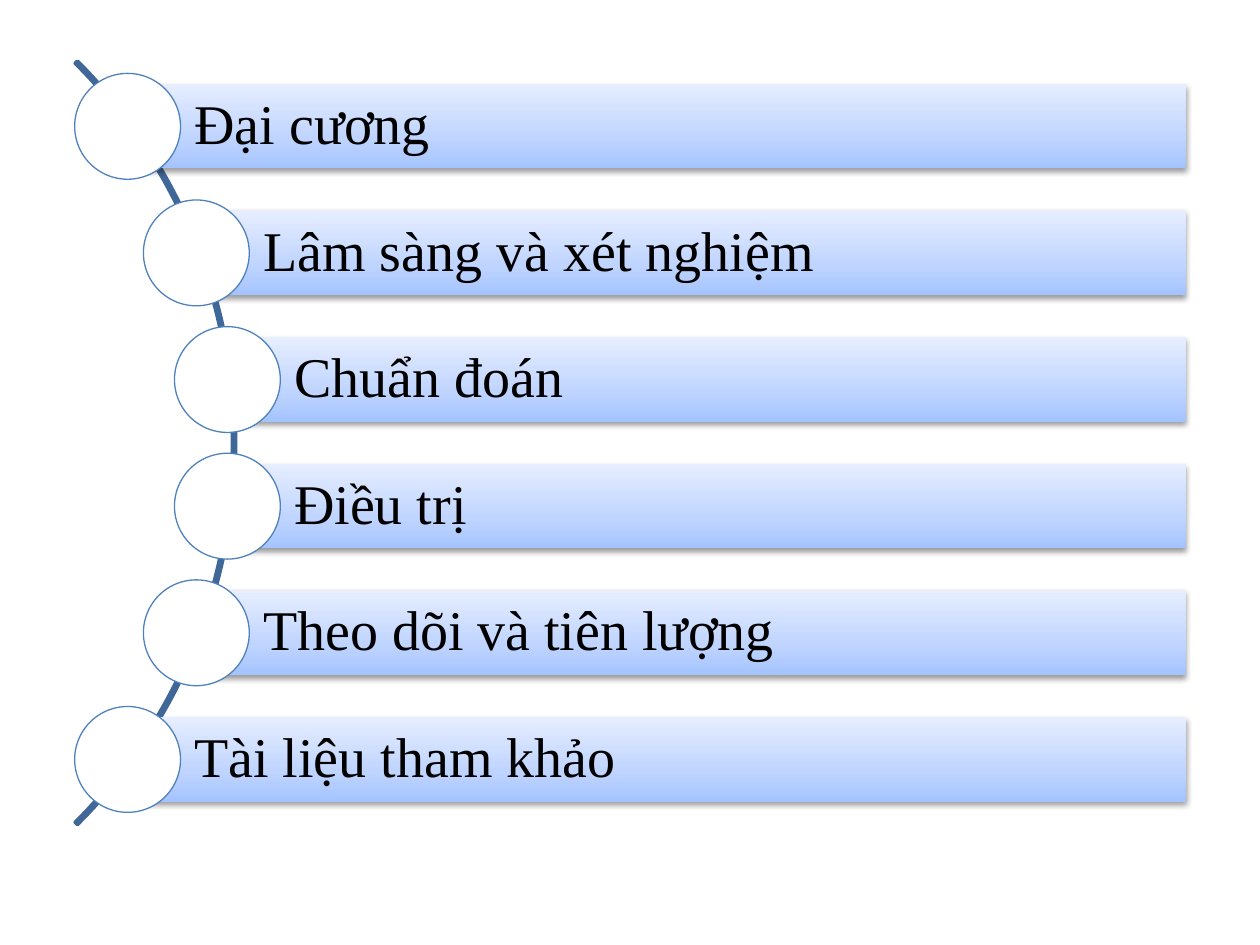
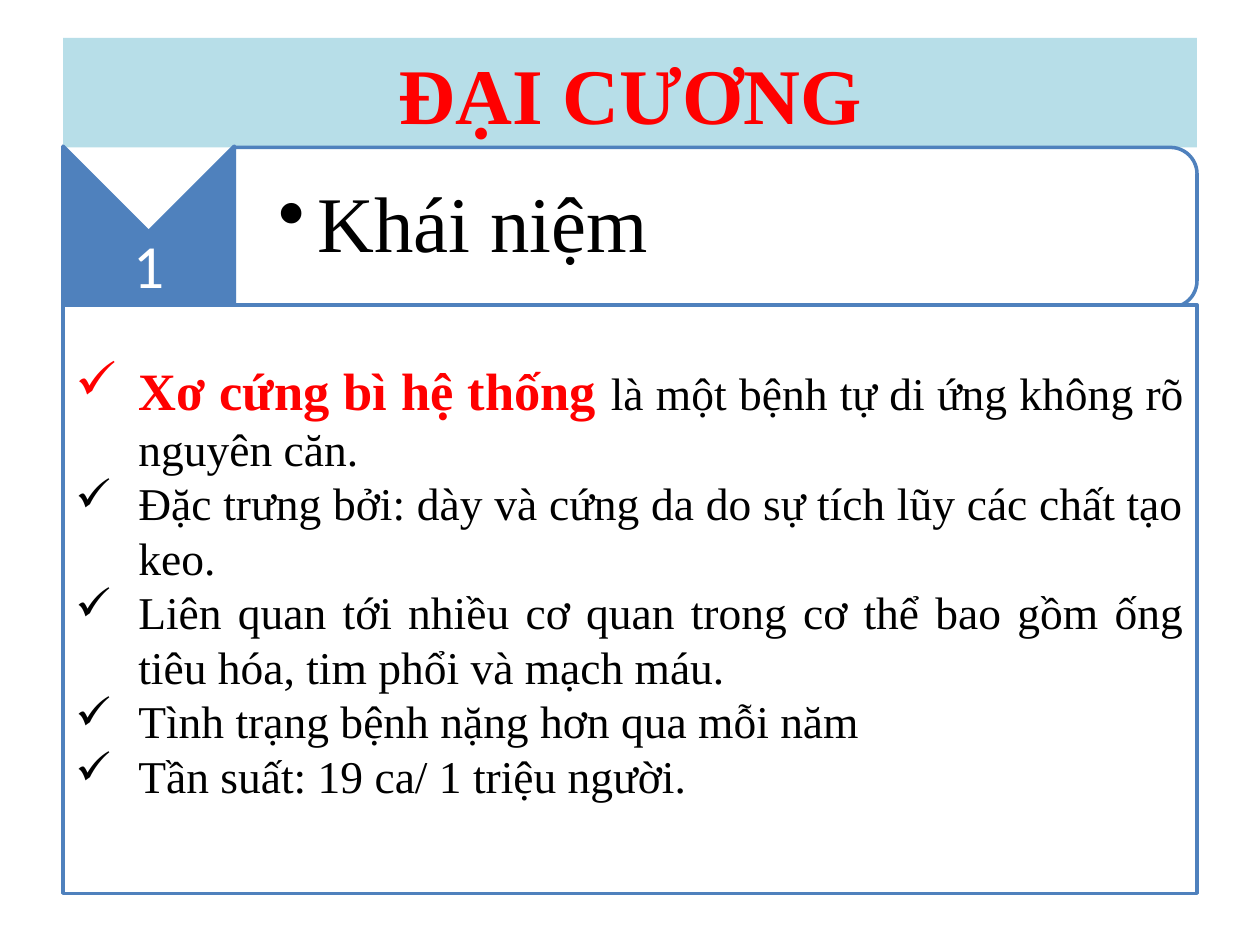
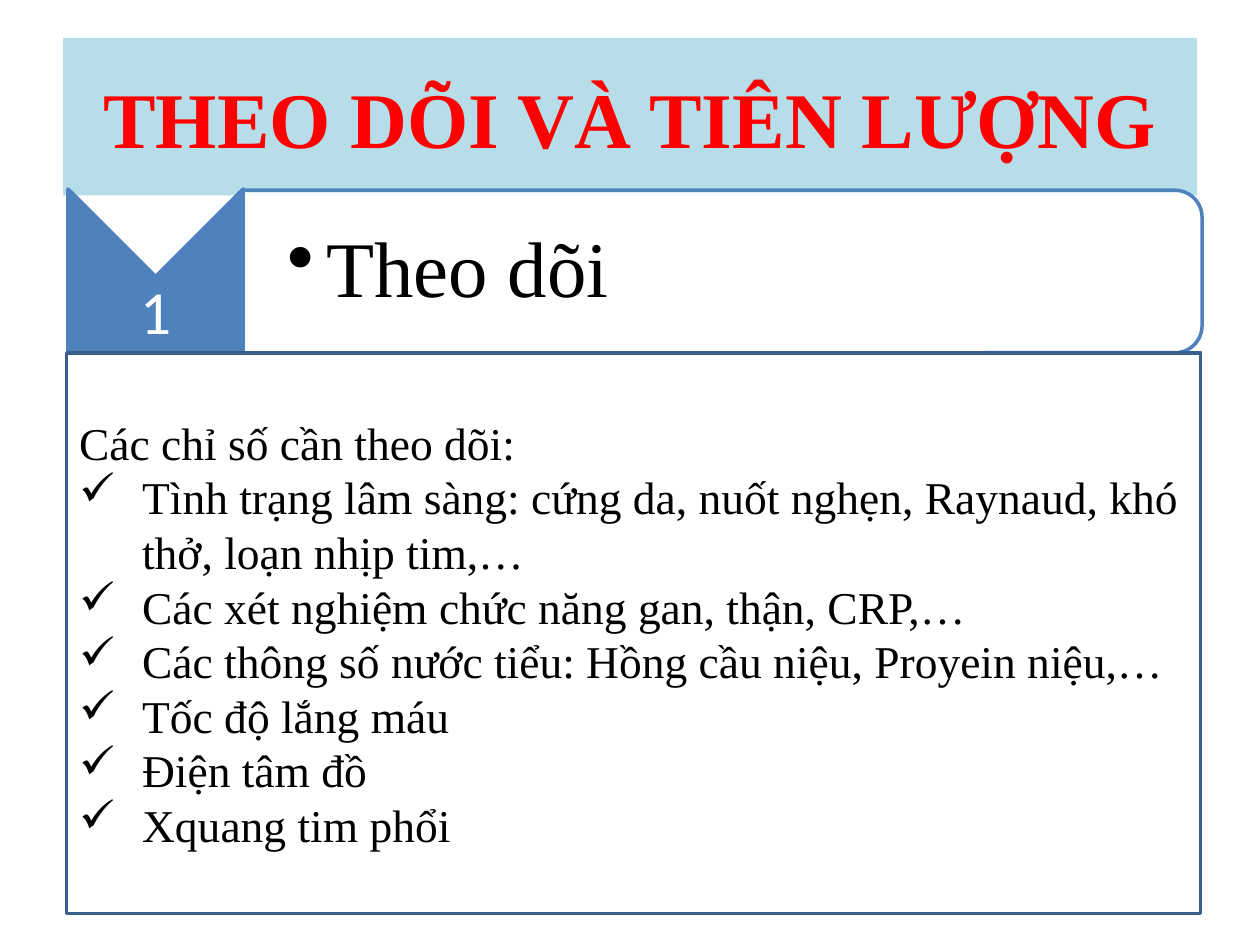
from dataclasses import dataclass
from math import sqrt

from lxml import etree
from pptx import Presentation
from pptx.dml.color import RGBColor
from pptx.enum.shapes import MSO_SHAPE
from pptx.enum.text import MSO_ANCHOR, MSO_AUTO_SIZE, PP_ALIGN
from pptx.oxml.ns import qn
from pptx.util import Inches, Pt

RECTANGLE = MSO_SHAPE.RECTANGLE
OVAL = MSO_SHAPE.OVAL
ARC = MSO_SHAPE.BLOCK_ARC
CHEVRON = MSO_SHAPE.CHEVRON
ROUND_TOP = MSO_SHAPE.ROUND_2_SAME_RECTANGLE
MIDDLE = MSO_ANCHOR.MIDDLE
NO_AUTOFIT = MSO_AUTO_SIZE.NONE
LEFT, CENTER, JUSTIFY = PP_ALIGN.LEFT, PP_ALIGN.CENTER, PP_ALIGN.JUSTIFY

SERIF, SANS = "Times New Roman", "Calibri"
COLORS = {
    "white": "FFFFFF", "black": "000000", "red": "FF0000",
    "band": "B7DEE8", "blue": "4F81BD", "deep": "3A5F8C", "arc": "3F6797",
}
BAR_GRADIENT = [(0, "A4C4FF"), (35, "BFD4FF"), (100, "E6EEFF")]

# Text formats
TITLE = {"name": SERIF, "size": 45, "bold": True, "color": "red"}
BAR = {"name": SERIF, "size": 32, "color": "black"}
NUMBER = {"name": SANS, "size": 35, "color": "white"}
CAPTION = {"name": SERIF, "size": 45, "color": "black"}
BODY = {"name": SERIF, "size": 26, "color": "black"}
TERM = {"name": SERIF, "size": 30, "bold": True, "color": "red"}


@dataclass
class Box:
    left: float
    top: float
    width: float
    height: float

    def lengths(self) -> list:
        return [Inches(n) for n in (self.left, self.top, self.width, self.height)]


@dataclass
class Line:
    spans: list
    bullet: str = ""
    indent: float = 0.5


@dataclass
class Topic:
    title: str
    title_height: float
    caption: str
    chevron: Box
    tile: Box
    panel: Box
    panel_line: str
    lines: list
    align: int
    bottom_inset: float = 0.05


# Helpers
def rgb(name: str) -> RGBColor:
    return RGBColor.from_string(COLORS[name])


def add_element(parent, tag: str, **attributes):
    element = etree.SubElement(parent, qn(tag))
    for key, value in attributes.items():
        element.set(key, str(value))
    return element


def add_figure(page, kind: int, box: Box, fill: str = "", line: str = "",
               weight: float = 2, turned: bool = False):
    """Draw a preset shape; a turned one fills its box after a quarter turn."""
    if turned:
        shift = (box.width - box.height) / 2
        box = Box(box.left + shift, box.top - shift, box.height, box.width)
    shape = page.shapes.add_shape(kind, *box.lengths())
    shape.rotation = 90 if turned else 0
    shape.shadow.inherit = False
    if fill:
        shape.fill.solid()
        shape.fill.fore_color.rgb = rgb(fill)
    else:
        shape.fill.background()
    if line:
        shape.line.color.rgb = rgb(line)
        shape.line.width = Pt(weight)
    else:
        shape.line.fill.background()
    return shape


def write(shape, lines: list, align: int = LEFT, spacing: float = 1.0,
          insets: tuple = (0.1, 0.05, 0.1, 0.05)) -> None:
    frame = shape.text_frame
    settings = {"word_wrap": True, "auto_size": NO_AUTOFIT, "vertical_anchor": MIDDLE}
    sides = ("margin_left", "margin_top", "margin_right", "margin_bottom")
    settings.update(zip(sides, map(Inches, insets)))
    for key, value in settings.items():
        setattr(frame, key, value)
    for index, line in enumerate(lines):
        para = frame.add_paragraph() if index else frame.paragraphs[0]
        para.alignment, para.line_spacing = align, spacing
        if line.bullet:
            properties = para._p.get_or_add_pPr()
            properties.set("marL", str(Inches(line.indent)))
            properties.set("indent", str(-Inches(line.indent)))
            add_element(properties, "a:buChar", char=line.bullet)
        for text, style in line.spans:
            span = para.add_run()
            span.text = text
            values = {"bold": False, **style, "size": Pt(style["size"])}
            span.font.color.rgb = rgb(values.pop("color"))
            for key, value in values.items():
                setattr(span.font, key, value)


def add_text(page, box: Box, line: Line, align: int, insets: tuple) -> None:
    write(page.shapes.add_textbox(*box.lengths()), [line], align, 0.9, insets)


def style_bar(shape) -> None:
    """Give a bar its three-stop gradient and its soft shadow."""
    shape.fill.gradient()
    properties = shape._element.spPr
    gradient = properties.find(qn("a:gradFill"))
    for child in list(gradient):
        gradient.remove(child)
    stops = add_element(gradient, "a:gsLst")
    for percent, color in BAR_GRADIENT:
        stop = add_element(stops, "a:gs", pos=percent * 1000)
        add_element(stop, "a:srgbClr", val=color)
    add_element(gradient, "a:lin", ang=270 * 60000, scaled=0)
    shadow = add_element(properties.find(qn("a:effectLst")), "a:outerShdw",
                         blurRad=Pt(3.1), dist=Pt(1.6), dir=90 * 60000, rotWithShape=0)
    color = add_element(shadow, "a:srgbClr", val=COLORS["black"])
    add_element(color, "a:alpha", val=38000)


# Agenda: bars whose nodes sit along an arc
AGENDA = ["Đại cương", "Lâm sàng và xét nghiệm", "Chuẩn đoán", "Điều trị",
          "Theo dõi và tiên lượng", "Tài liệu tham khảo"]
ARC_X, ARC_Y, ARC_RADIUS, NODE_RADIUS = -2.415, 3.515, 4.285, 4.25
NODE, BAR_HEIGHT, BAR_RIGHT, STEP = 0.84, 0.67, 9.41, 1.005


def build_agenda(page) -> None:
    size = 2 * ARC_RADIUS
    arc = add_figure(page, ARC, Box(ARC_X - ARC_RADIUS, ARC_Y - ARC_RADIUS, size, size),
                     line="arc")
    for index, value in enumerate((189, 27, 0.003)):
        arc.adjustments[index] = value
    for index, name in enumerate(AGENDA):
        offset = (index - (len(AGENDA) - 1) / 2) * STEP
        x, y = ARC_X + sqrt(NODE_RADIUS ** 2 - offset ** 2), ARC_Y + offset
        bar = add_figure(page, RECTANGLE,
                         Box(x, y - BAR_HEIGHT / 2, BAR_RIGHT - x, BAR_HEIGHT), "white")
        style_bar(bar)
        write(bar, [Line([(name, BAR)])], LEFT, 0.9, (0.53, 0.09, 0.09, 0.09))
        add_figure(page, OVAL, Box(x - NODE / 2, y - NODE / 2, NODE, NODE),
                   "white", "blue", 0.75)


# Topic slides: title band, numbered caption, panel of points
def build_topic(page, topic: Topic) -> None:
    title = page.shapes.title
    place = Box(0.5, 0.3, 9, topic.title_height).lengths()
    for key, value in zip(("left", "top", "width", "height"), place):
        setattr(title, key, value)
    title.fill.solid()
    title.fill.fore_color.rgb = rgb("band")
    write(title, [Line([(topic.title, TITLE)])], CENTER)

    mark, tile = topic.chevron, topic.tile
    add_figure(page, CHEVRON, mark, "blue", "blue", turned=True)
    number = Box(mark.left, mark.top + mark.width / 2, mark.width, mark.height - mark.width)
    add_text(page, number, Line([("1", NUMBER)]), CENTER, (0.02,) * 4)

    card = add_figure(page, ROUND_TOP, tile, "white", "blue", turned=True)
    color = card._element.spPr.find(qn("a:solidFill"))[0]
    add_element(color, "a:alpha", val=90000)
    caption = Box(tile.left, tile.top + 0.06, tile.width - 0.07, tile.height - 0.12)
    add_text(page, caption, Line([(topic.caption, CAPTION)], "•", 0.31), LEFT,
             (0.35, 0.03, 0.03, 0.03))

    panel = add_figure(page, RECTANGLE, topic.panel, "white", topic.panel_line)
    write(panel, topic.lines, topic.align, insets=(0.1, 0.05, 0.1, topic.bottom_inset))


def check(text: str) -> Line:
    return Line([(text, BODY)], "✓")


TOPICS = [
    Topic("ĐẠI CƯƠNG", 0.87, "Khái niệm",
          Box(0.5, 1.16, 1.36, 1.95), Box(1.86, 1.17, 7.64, 1.27),
          Box(0.5, 2.42, 9, 4.67), "blue",
          [Line([("Xơ cứng bì hệ thống ", TERM),
                 ("là một bệnh tự di ứng không rõ nguyên căn.", BODY)], "✓"),
           check("Đặc trưng bởi: dày và cứng da do sự tích lũy các chất tạo keo."),
           check("Liên quan tới nhiều cơ quan trong cơ thể bao gồm ống tiêu hóa, "
                 "tim phổi và mạch máu."),
           check("Tình trạng bệnh nặng hơn qua mỗi năm"),
           check("Tần suất: 19 ca/ 1 triệu người.")],
          JUSTIFY, 0.35),
    Topic("THEO DÕI VÀ TIÊN LƯỢNG", 1.25, "Theo dõi",
          Box(0.54, 1.5, 1.39, 1.99), Box(1.93, 1.51, 7.61, 1.29),
          Box(0.53, 2.8, 9, 4.45), "deep",
          [Line([("Các chỉ số cần theo dõi:", BODY)]),
           check("Tình trạng lâm sàng: cứng da, nuốt nghẹn, Raynaud, khó thở, "
                 "loạn nhịp tim,…"),
           check("Các xét nghiệm chức năng gan, thận, CRP,…"),
           check("Các thông số nước tiểu: Hồng cầu niệu, Proyein niệu,…"),
           check("Tốc độ lắng máu"),
           check("Điện tâm đồ"),
           check("Xquang tim phổi")],
          LEFT),
]


def main() -> None:
    deck = Presentation()
    deck.slide_width, deck.slide_height = Inches(10), Inches(7.5)
    title_only, blank = deck.slide_layouts[5], deck.slide_layouts[6]
    build_agenda(deck.slides.add_slide(blank))
    for topic in TOPICS:
        build_topic(deck.slides.add_slide(title_only), topic)
    deck.save("out.pptx")


if __name__ == "__main__":
    main()
